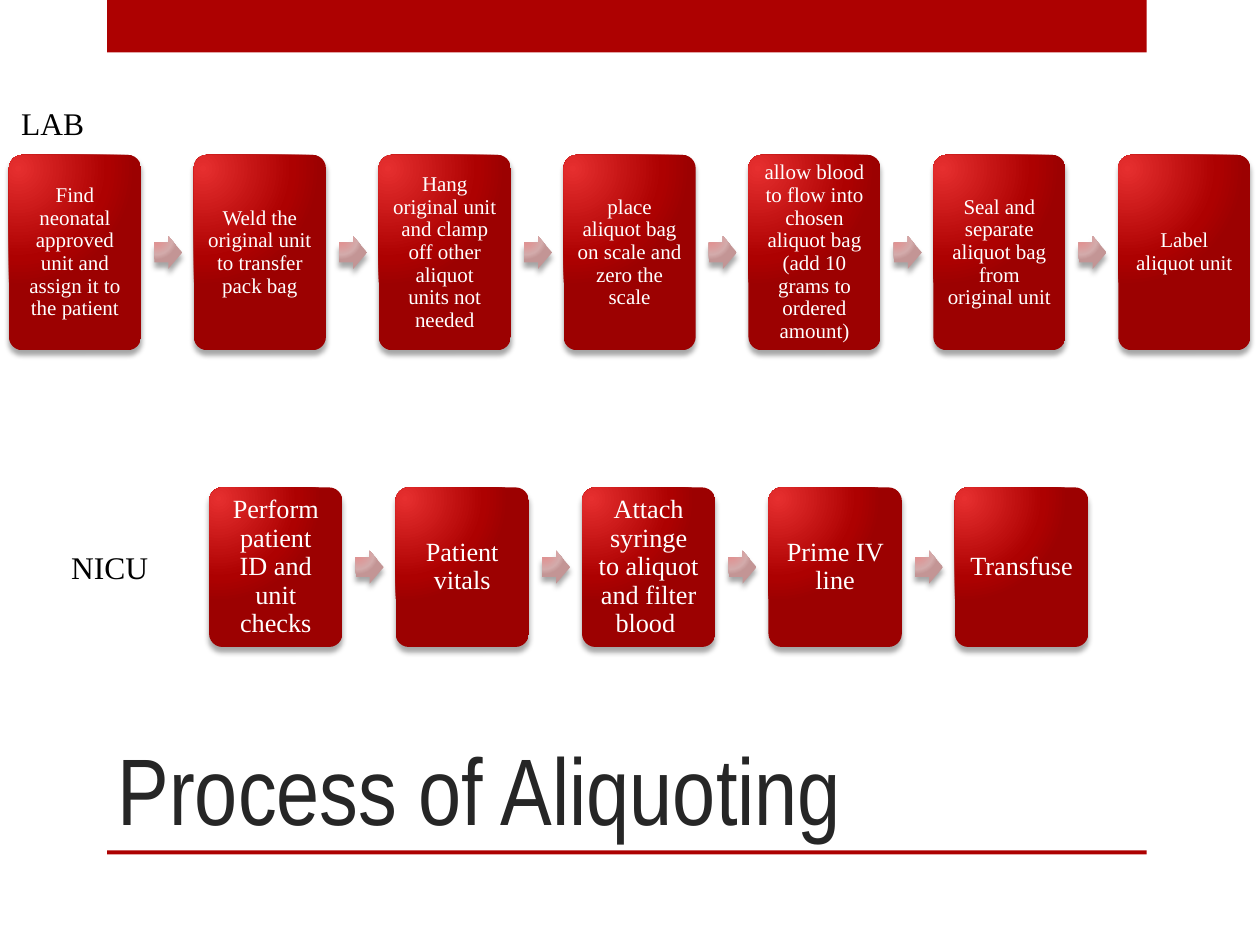
from lxml import etree
from pptx import Presentation
from pptx.dml.color import RGBColor
from pptx.enum.shapes import MSO_SHAPE
from pptx.enum.text import MSO_ANCHOR, MSO_AUTO_SIZE, PP_ALIGN
from pptx.oxml import parse_xml
from pptx.oxml.ns import nsdecls, qn
from pptx.util import Pt

RECT = MSO_SHAPE.RECTANGLE
ROUNDED = MSO_SHAPE.ROUNDED_RECTANGLE
ARROW = MSO_SHAPE.RIGHT_ARROW
SERIF = "Times New Roman"
COLORS = {"red": "AD0101", "title": "262626", "text": "000000", "white": "FFFFFF"}
BOX_STOPS = ("E62F2F", "AD0101", "9C0101")
ARROW_STOPS = ("E68989", "D3ABAB", "C39595")


def style_text(p, text, size, font, color):
    p.text = text
    p.font.size = Pt(size)
    p.font.name = font
    p.font.color.rgb = RGBColor.from_string(COLORS[color])


def add_glossy(kind, x, y, w, h, stops):
    """Add a borderless shape with a radial gradient and a soft shadow."""
    sp = s.shapes.add_shape(kind, Pt(x), Pt(y), Pt(w), Pt(h))
    sp.line.fill.background()
    sp.shadow.inherit = False
    gs = "".join(
        f'<a:gs pos="{pos}"><a:srgbClr val="{c}"/></a:gs>'
        for pos, c in zip((0, 76000, 100000), stops))
    sp.line._get_or_add_ln().addprevious(parse_xml(
        f'<a:gradFill {nsdecls("a")} rotWithShape="1"><a:gsLst>{gs}</a:gsLst>'
        '<a:path path="circle"><a:fillToRect l="15000" t="15000" r="100000" b="100000"/>'
        '</a:path></a:gradFill>'))
    effects = sp._element.spPr.find(qn("a:effectLst"))
    shadow = etree.SubElement(effects, qn("a:outerShdw"), blurRad="38100",
                              dist="38100", dir="5400000", rotWithShape="0")
    color = etree.SubElement(shadow, qn("a:srgbClr"), val="000000")
    etree.SubElement(color, qn("a:alpha"), val="35000")
    return sp


prs = Presentation()
prs.slide_width, prs.slide_height = Pt(720), Pt(540)
s = prs.slides.add_slide(prs.slide_layouts[5])

# Top band and bottom rule
for y, h in ((0, 30), (486, 2.2)):
    sp = s.shapes.add_shape(RECT, Pt(61.2), Pt(y), Pt(594), Pt(h))
    sp.fill.solid()
    sp.fill.fore_color.rgb = RGBColor.from_string(COLORS["red"])
    sp.line.fill.background()
    sp.shadow.inherit = False

# Title
title = s.shapes.title
title.left, title.top, title.width, title.height = Pt(60), Pt(360), Pt(534), Pt(126)
tf = title.text_frame
tf.word_wrap = True
tf.auto_size = MSO_AUTO_SIZE.NONE
tf.vertical_anchor = MSO_ANCHOR.BOTTOM
p = tf.paragraphs[0]
style_text(p, "Process of Aliquoting", 54, "Arial Narrow", "title")
p.alignment = PP_ALIGN.LEFT

# Process rows: left, top, box width, box height, pitch, font size, inset, steps
rows = [
    (5.1, 88.5, 75.5, 111.6, 105.65, 12, 5.8, [
        "Find neonatal approved unit and assign it to the patient",
        "Weld the original unit to transfer pack bag",
        "Hang original unit and clamp off other aliquot units not needed",
        "place aliquot bag on scale and zero the scale",
        "allow blood to flow into chosen aliquot bag (add 10 grams to ordered amount)",
        "Seal and separate aliquot bag from original unit ",
        "Label aliquot unit",
    ]),
    (119.5, 278.5, 76.2, 91.2, 106.56, 15, 6.5, [
        "Perform patient ID and unit checks",
        "Patient vitals",
        "Attach syringe to aliquot and filter blood ",
        "Prime IV line",
        "Transfuse",
    ]),
]
ARROW_W, ARROW_H, ARROW_GAP = 16, 18.7, 7.6
for left, top, w, h, pitch, size, inset, steps in rows:
    for i, step in enumerate(steps):
        x = left + i * pitch
        sp = add_glossy(ROUNDED, x, top, w, h, BOX_STOPS)
        sp.adjustments[0] = 0.1
        tf = sp.text_frame
        tf.word_wrap = True
        tf.vertical_anchor = MSO_ANCHOR.MIDDLE
        tf.margin_left = tf.margin_right = tf.margin_top = tf.margin_bottom = Pt(inset)
        p = tf.paragraphs[0]
        style_text(p, step, size, SERIF, "white")
        p.alignment = PP_ALIGN.CENTER
        p.line_spacing = 0.9
        if i < len(steps) - 1:
            sp = add_glossy(ARROW, x + w + ARROW_GAP, top + (h - ARROW_H) / 2,
                            ARROW_W, ARROW_H, ARROW_STOPS)
            sp.adjustments[0] = 0.6
            sp.adjustments[1] = 0.5

# Row labels
for text, x, y, w in (("LAB", 5, 55.7, 150.5), ("NICU", 33.6, 309.8, 72.7)):
    tf = s.shapes.add_textbox(Pt(x), Pt(y), Pt(w), Pt(29)).text_frame
    tf.word_wrap = True
    style_text(tf.paragraphs[0], text, 18, SERIF, "text")

prs.save("out.pptx")
